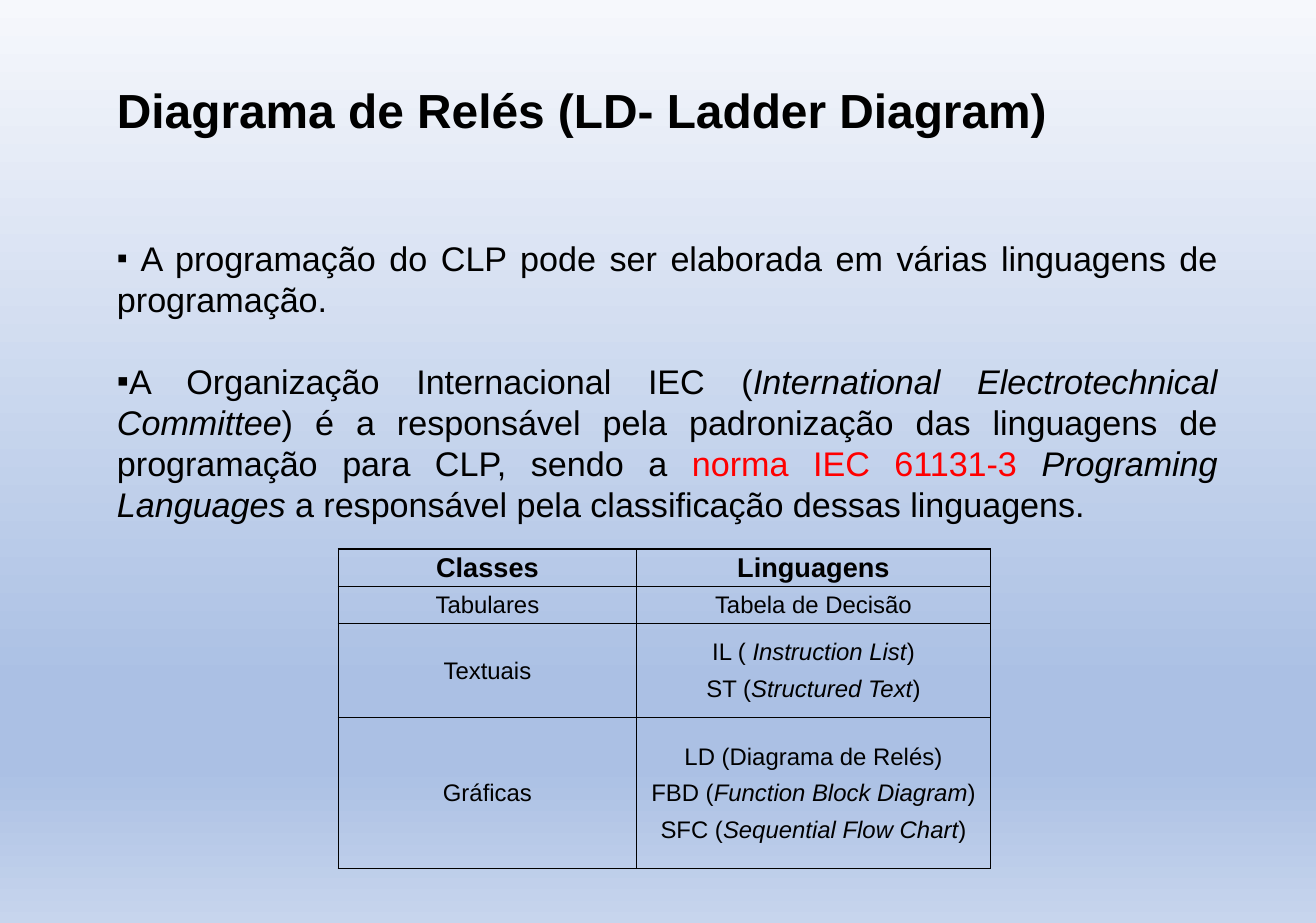
from lxml.etree import SubElement
from pptx import Presentation
from pptx.dml.color import RGBColor
from pptx.enum.text import MSO_ANCHOR as Anchor, PP_ALIGN as Align
from pptx.oxml.ns import qn
from pptx.util import Pt

BLACK = RGBColor(0, 0, 0)
RED = RGBColor(0xFF, 0, 0)
SKY = [
    (0, RGBColor(0xF6, 0xF8, 0xFC)),
    (74, RGBColor(0xAB, 0xC0, 0xE4)),
    (83, RGBColor(0xAB, 0xC0, 0xE4)),
    (100, RGBColor(0xC7, 0xD5, 0xED)),
]


def add_runs(paragraph, parts, size, bold=False):
    for text, style in parts:
        run = paragraph.add_run()
        run.text = text
        font = run.font
        font.name = "Arial"
        font.size = Pt(size)
        font.bold = bold
        font.italic = style == "italic"
        font.color.rgb = RED if style == "red" else BLACK


def add_text_area(left, top, width, height):
    frame = slide.shapes.add_textbox(Pt(left), Pt(top), Pt(width), Pt(height)).text_frame
    frame.word_wrap = True
    return frame


deck = Presentation()
deck.slide_width, deck.slide_height = Pt(825), Pt(578.5)
slide = deck.slides.add_slide(deck.slide_layouts[6])

sky = slide.background.fill
sky.gradient()
sky.gradient_angle = 270
stops = next(slide.element.iter(qn("a:gsLst")))
stops.clear()
for position, color in SKY:
    stop = SubElement(stops, qn("a:gs"), pos=str(position * 1000))
    SubElement(stop, qn("a:srgbClr"), val=str(color))

explanation = add_text_area(66.24, 145.44, 704.16, 188.64)
statements = [
    [
        (" ", ""),
        ("A programação do CLP pode ser elaborada em várias linguagens de programação. ", ""),
    ],
    [
        ("A Organização Internacional IEC (", ""),
        ("International Electrotechnical Committee", "italic"),
        (") é a responsável pela padronização das linguagens de programação para CLP, sendo a ", ""),
        ("norma IEC 61131-3 ", "red"),
        ("Programing Languages", "italic"),
        (" a responsável pela classificação dessas linguagens.", ""),
    ],
]
for index, parts in enumerate(statements):
    statement = explanation.add_paragraph() if index else explanation.paragraphs[0]
    statement.alignment = Align.JUSTIFY
    statement.space_before = Pt(25.7 * index)
    properties = statement._p.get_or_add_pPr()
    properties.set("marL", "0")
    properties.set("indent", "0")
    SubElement(properties, qn("a:buFont"), typeface="Arial")
    SubElement(properties, qn("a:buChar"), char="▪")
    add_runs(statement, parts, 21.4)
explanation.paragraphs[0].runs[0].font.size = Pt(19.3)

language_rows = [
    ("Classes", [[("Linguagens", "")]]),
    ("Tabulares", [[("Tabela de Decisão", "")]]),
    ("Textuais", [
        [("IL ( ", ""), ("Instruction List", "italic"), (")", "")],
        [("ST (", ""), ("Structured Text", "italic"), (")", "")],
    ]),
    ("Gráficas", [
        [("LD (Diagrama de Relés)", "")],
        [("FBD (", ""), ("Function Block Diagram", "italic"), (")", "")],
        [("SFC (", ""), ("Sequential Flow Chart", "italic"), (")", "")],
    ]),
]
languages = slide.shapes.add_table(4, 2, Pt(212.1), Pt(344.16), Pt(408.8), Pt(200.16)).table
languages.first_row = False
languages.horz_banding = False
for column, width in zip(languages.columns, (187, 221.8)):
    column.width = Pt(width)
for row, height in zip(languages.rows, (23.3, 23.3, 59, 94.56)):
    row.height = Pt(height)

for row_index, (category, members) in enumerate(language_rows):
    heading = row_index == 0
    for cell, lines in zip(languages.rows[row_index].cells, ([[(category, "")]], members)):
        cell.vertical_anchor = Anchor.MIDDLE
        cell.margin_left = cell.margin_right = Pt(3.6)
        cell.margin_top = cell.margin_bottom = Pt(0)
        for index, parts in enumerate(lines):
            line = cell.text_frame.add_paragraph() if index else cell.text_frame.paragraphs[0]
            line.alignment = Align.CENTER
            line.line_spacing = 1.05
            line.space_before = Pt(5.6)
            add_runs(line, parts, 17 if heading else 15, heading)
        cell_properties = cell._tc.get_or_add_tcPr()
        for side in ("a:lnL", "a:lnR", "a:lnT", "a:lnB"):
            border = SubElement(cell_properties, qn(side), w=str(Pt(1)))
            ink = SubElement(border, qn("a:solidFill"))
            SubElement(ink, qn("a:srgbClr"), val=str(BLACK))
        cell.fill.background()

title = add_text_area(66.24, 46.8, 696.24, 66.96)
add_runs(title.paragraphs[0], [("Diagrama de Relés (LD- Ladder Diagram)", "")], 30, True)

deck.save("out.pptx")
